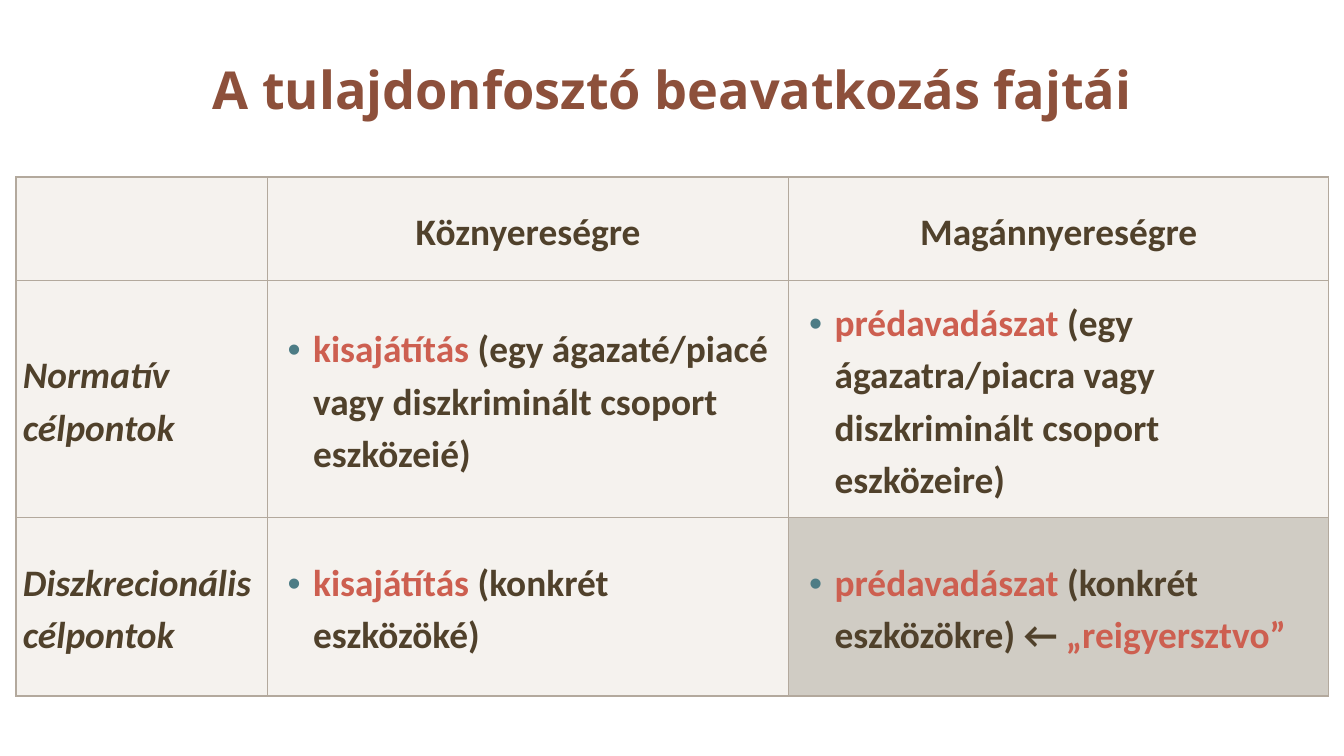
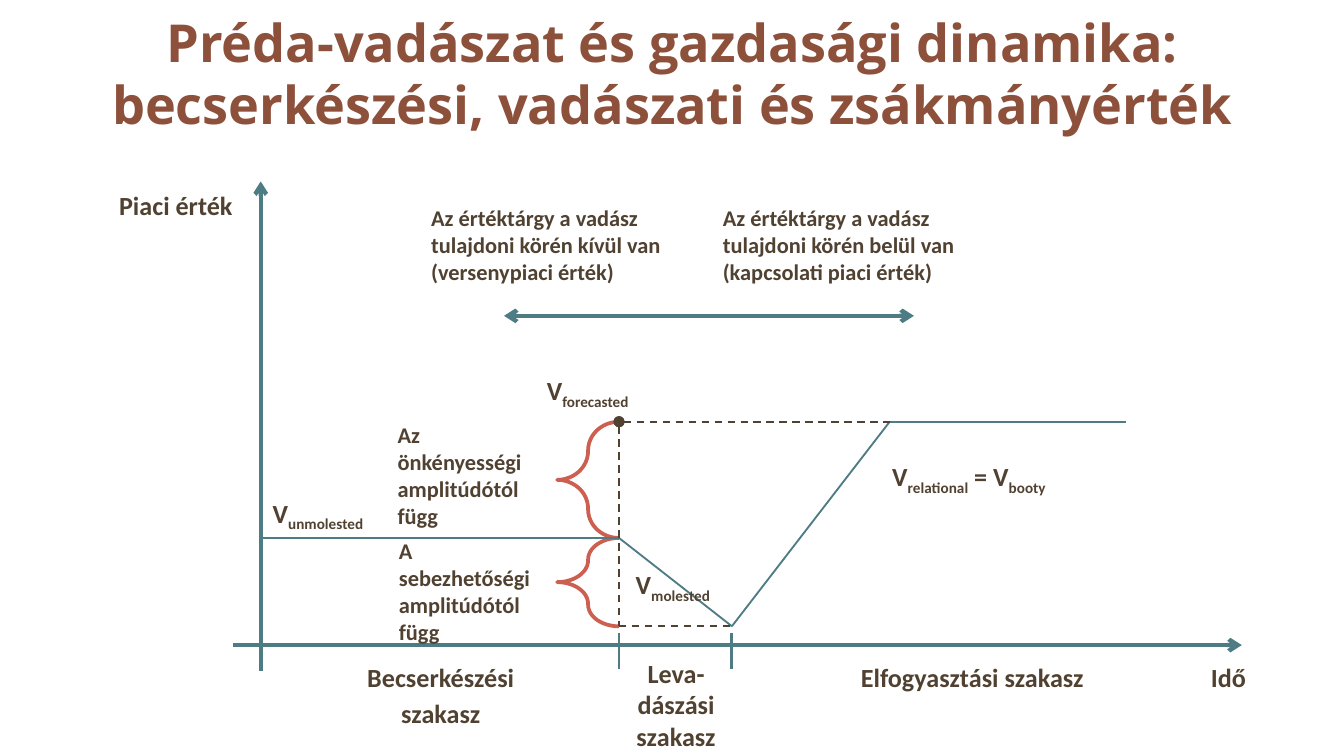
from dataclasses import dataclass

import lxml.etree
import pptx
import pptx.dml.color
import pptx.enum.dml
import pptx.enum.shapes
import pptx.enum.text
import pptx.oxml.ns
import pptx.util

ALIGN = pptx.enum.text.PP_ALIGN
ANCHOR = pptx.enum.text.MSO_ANCHOR
qn = pptx.oxml.ns.qn


@dataclass(frozen=True)
class Theme:
    title: str = "8D503B"
    text: str = "504131"
    table_text: str = "50412B"
    accent: str = "CD5F50"
    teal: str = "4D7C85"
    border: str = "B3A99D"
    cell: str = "EFEAE4"
    cell_marked: str = "B2AA9D"
    heading_font: str = "Open Sans"
    body_font: str = "Calibri"
    title_size: int = 28
    table_size: int = 20
    label_size: int = 14
    note_size: int = 12


T = Theme()
COLUMNS, ROWS = 100, 56.25  # square grid over the whole slide
CELL = pptx.util.Inches(0.1)


def grid(*counts):
    return [round(n * CELL) for n in counts]


def rgb(value):
    return pptx.dml.color.RGBColor.from_string(value)


def child(parent, tag, **attributes):
    return lxml.etree.SubElement(parent, qn(tag), attributes)


def add_bullet(p):
    pPr = p._p.get_or_add_pPr()
    indent = pptx.util.Inches(0.19)
    pPr.set("marL", str(pptx.util.Inches(0.29)))
    pPr.set("indent", str(-indent))
    child(child(pPr, "a:buClr"), "a:srgbClr", val=T.teal)
    child(pPr, "a:buFont", typeface="Arial")
    child(pPr, "a:buChar", char="•")


def write(tf, runs, size, color, font=T.body_font, align=ALIGN.LEFT,
          spacing=None, after=None, italic=False, bullet=False):
    """Fill the first paragraph; runs is a string or (text, style) pairs."""
    p = tf.paragraphs[0]
    p.alignment = align
    if spacing:
        p.line_spacing = spacing
    if after:
        p.space_after = pptx.util.Pt(after)
    if bullet:
        add_bullet(p)
    p.font.name = font
    p.font.size = pptx.util.Pt(size)
    p.font.bold = True
    p.font.italic = italic
    p.font.color.rgb = rgb(color)
    for text, style in [(runs, "")] if isinstance(runs, str) else runs:
        r = p.add_run()
        r.text = text
        if style == "accent":
            r.font.color.rgb = rgb(T.accent)
        elif style == "sub":
            r.font._element.set("baseline", "-25000")


def add_text(s, box, runs, size, color=T.text, anchor=ANCHOR.TOP, margin=None, **style):
    tf = s.shapes.add_textbox(*grid(*box)).text_frame
    tf.word_wrap = True
    tf.vertical_anchor = anchor
    if margin is not None:
        tf.margin_left = tf.margin_right = tf.margin_top = tf.margin_bottom = margin
    write(tf, runs, size, color, **style)


def add_title(s, text, height):
    add_text(s, (1.2, 0, COLUMNS - 2.4, height), text, T.title_size, T.title, ANCHOR.MIDDLE,
             font=T.heading_font, align=ALIGN.CENTER)


def add_label(s, box, runs, **style):
    add_text(s, box, runs, T.label_size, after=10, **{"spacing": 1.15, **style})


def add_note(s, box, text):
    add_text(s, box, text, T.note_size, anchor=ANCHOR.MIDDLE, after=10)


def add_line(s, start, end, color=T.teal, width=1, dash=False, head=None, tail=None):
    line = s.shapes.add_connector(pptx.enum.shapes.MSO_CONNECTOR.STRAIGHT,
                                  *grid(*start, *end))
    line.line.color.rgb = rgb(color)
    line.line.width = pptx.util.Pt(width)
    if dash:
        line.line.dash_style = pptx.enum.dml.MSO_LINE.DASH
    ln = line.line._get_or_add_ln()
    for tag, kind in (("a:headEnd", head), ("a:tailEnd", tail)):
        if kind:
            child(ln, tag, type=kind)
    child(line._element.spPr, "a:effectLst")


def add_brace(s, box, curve):
    sp = s.shapes.add_shape(pptx.enum.shapes.MSO_SHAPE.LEFT_BRACE, *grid(*box))
    sp.shadow.inherit = False
    sp.fill.background()
    sp.line.color.rgb = rgb(T.accent)
    sp.line.width = pptx.util.Pt(2)
    sp.adjustments[0] = curve


def style_cell(cell, fill, outer):
    """Set margins, borders (1 pt on outer sides, else 0.5) and a 60% fill."""
    cell.margin_left = cell.margin_right = pptx.util.Inches(0.05)
    cell.margin_top = cell.margin_bottom = pptx.util.Inches(0.05)
    cell.vertical_anchor = ANCHOR.MIDDLE
    tcPr = cell._tc.get_or_add_tcPr()
    for side in "LRTB":
        width = pptx.util.Pt(1 if side in outer else 0.5)
        ln = child(tcPr, f"a:ln{side}", w=str(width))
        child(child(ln, "a:solidFill"), "a:srgbClr", val=T.border)
    cell.fill.solid()
    cell.fill.fore_color.rgb = rgb(fill)
    child(tcPr.find(qn("a:solidFill"))[0], "a:alpha", val="60000")


def add_matrix(s, box, widths, heights, rows):
    last_row, last_col = len(heights) - 1, len(widths) - 1
    table = s.shapes.add_table(len(heights), len(widths), *grid(*box)).table
    table.first_row = table.horz_banding = False
    for column, width in zip(table.columns, grid(*widths)):
        column.width = width
    for row, height in zip(table.rows, grid(*heights)):
        row.height = height
    for i, row in enumerate(rows):
        for j, runs in enumerate(row):
            cell = table.cell(i, j)
            edges = {"L": j == 0, "R": j == last_col, "T": i == 0, "B": i == last_row}
            marked = (i, j) == (last_row, last_col)
            style_cell(cell, T.cell_marked if marked else T.cell,
                       [side for side, is_outer in edges.items() if is_outer])
            if runs:
                write(cell.text_frame, runs, T.table_size, T.table_text, spacing=1.15,
                      align=ALIGN.CENTER if i == 0 else ALIGN.LEFT,
                      italic=j == 0, bullet=i > 0 and j > 0)


def build_types(s):
    add_title(s, "A tulajdonfosztó beavatkozás fajtái", 13.2)
    taking, hunting = ("kisajátítás", "accent"), ("prédavadászat", "accent")
    add_matrix(s, (1.2, 13.18, 97.6, 38.6), (18.7, 38.8, 40.15), (7.7, 17.6, 13.3), [
        ["", "Köznyereségre", "Magánnyereségre"],
        ["Normatív célpontok",
         [taking, (" (egy ágazaté/piacé vagy diszkriminált csoport eszközeié)", "")],
         [hunting, (" (egy ágazatra/piacra vagy diszkriminált csoport eszközeire)", "")]],
        ["Diszkrecionális célpontok",
         [taking, (" (konkrét eszközöké)", "")],
         [hunting, (" (konkrét eszközökre) ← ", ""), ("„reigyersztvo”", "accent")]],
    ])


def value(name):
    return [("V", ""), (name, "sub")]


def build_dynamics(s):
    add_title(s, "Préda-vadászat és gazdasági dinamika: "
                 "becserkészési, vadászati és zsákmányérték", 10.8)
    origin, hunt, kill, booty, end = 19.4, 46.06, 54.46, 66.2, 83.8
    high, middle, low, axis = 31.38, 40.03, 46.6, 48

    add_brace(s, (hunt - 4.6, high, 4.6, middle - high), 0.465)
    add_brace(s, (hunt - 4.6, middle, 4.6, low - middle), 0.351)

    # Axes and phase marks
    add_line(s, (origin, 13.5), (origin, 49.9), width=2.25, head="arrow")
    add_line(s, (92.4, axis), (17.3, axis), width=2.25, head="arrow")
    for x in (hunt, kill):
        add_line(s, (x, 47.1), (x, 49.8), width=1.5)

    # Value curve
    curve = [(origin, middle), (hunt, middle), (kill, low), (booty, high), (end, high)]
    for start, stop in zip(curve, curve[1:]):
        add_line(s, start, stop, width=1.25 if start[0] == origin else 1)

    # Forecast guides
    for start, stop, head in [((hunt, high), (booty, high), "oval"),
                              ((hunt, high), (hunt, low), "oval"),
                              ((hunt, low), (kill, low), None)]:
        add_line(s, start, stop, T.text, dash=True, head=head)

    # Outside and inside the hunter's ownership
    for tip in (37.5, 68):
        add_line(s, (52.8, 23.5), (tip, 23.5), width=2.25, tail="arrow")
    add_note(s, (31.1, 14.3, 21.7, 7.8),
             "Az értéktárgy a vadász tulajdoni körén kívül van (versenypiaci érték)")
    add_note(s, (52.8, 14.3, 22.4, 7.8),
             "Az értéktárgy a vadász tulajdoni körén belül van (kapcsolati piaci érték)")
    add_note(s, (28.6, 30.6, 12.8, 9.5), "Az önkényességi amplitúdótól függ")
    add_note(s, (28.7, 40, 12.7, 8), "A sebezhetőségi amplitúdótól függ")

    add_label(s, (19.3, 36.1, 9.5, 5.6), value("unmolested"))
    add_label(s, (39.7, 27, 19.9, 5.6), value("forecasted"))
    add_label(s, (65.4, 33.4, 16.5, 5.6),
              value("relational") + [(" = ", "")] + value("booty"))
    add_label(s, (47.3, 41.9, 6.5, 2.8), value("molested"), margin=0)

    add_label(s, (5.5, 13.2, 12.8, 3.7), "Piaci érték",
              anchor=ANCHOR.MIDDLE, align=ALIGN.RIGHT)
    for left, width, height, text, spacing in [
            (24.1, 17.4, 4.7, "Becserkészési szakasz", 1.15),
            (45.7, 9.2, 5.9, "Leva-dászási szakasz", None),
            (62.8, 19.1, 4.5, "Elfogyasztási szakasz", 1.15),
            (88.3, 6.2, 4.7, "Idő", 1.15)]:
        add_label(s, (left, 48.4, width, height), text, align=ALIGN.CENTER, spacing=spacing)


def main():
    prs = pptx.Presentation()
    prs.slide_width, prs.slide_height = grid(COLUMNS, ROWS)
    for build in (build_types, build_dynamics):
        build(prs.slides.add_slide(prs.slide_layouts[6]))
    prs.save("out.pptx")


if __name__ == "__main__":
    main()
